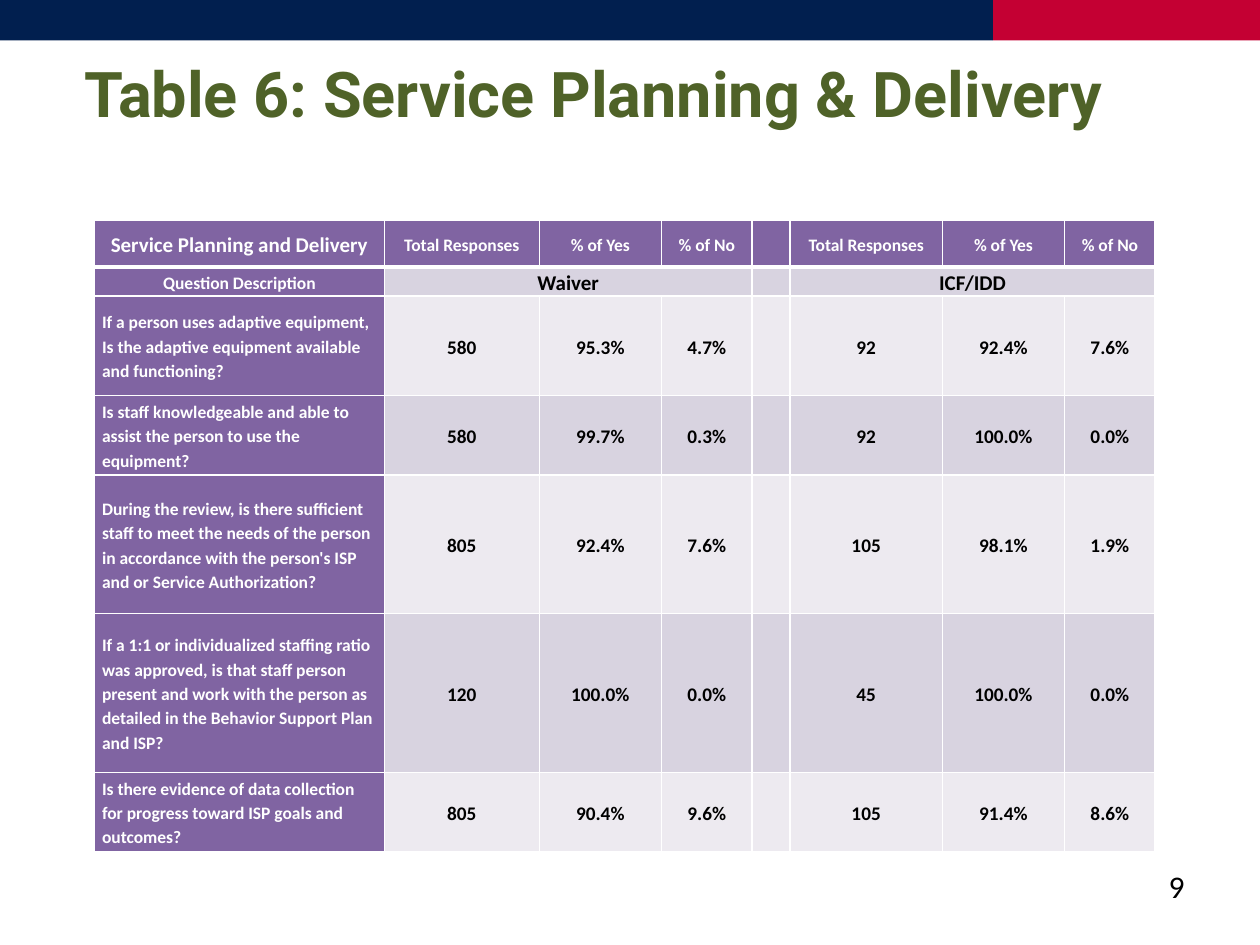
from lxml.etree import SubElement
from pptx import Presentation
from pptx.dml.color import RGBColor
from pptx.enum.shapes import MSO_SHAPE
from pptx.enum.text import MSO_ANCHOR, PP_ALIGN
from pptx.oxml.ns import qn
from pptx.util import Inches, Pt

NAVY = RGBColor(0x01, 0x1F, 0x4F)
RED = RGBColor(0xC4, 0x00, 0x33)
GREEN = RGBColor(0x4F, 0x62, 0x28)
PURPLE = RGBColor(0x80, 0x64, 0xA2)
LILAC = RGBColor(0xD8, 0xD3, 0xE0)
PALE = RGBColor(0xED, 0xEA, 0xF0)
WHITE = RGBColor(0xFF, 0xFF, 0xFF)
BLACK = RGBColor(0x00, 0x00, 0x00)

COLUMN_WIDTHS = [2.3, 1.23, 0.97, 0.72, 0.3, 1.21, 0.97, 0.72]
ROW_HEIGHTS = [0.37, 0.23, 0.79, 0.63, 1.1, 1.26, 0.63]
MEASURES = ["Total Responses", "% of Yes", "% of No"]
ROWS = [
    ["Service Planning and Delivery", *MEASURES, "", *MEASURES],
    ["Question Description", "Waiver", "", "", "", "ICF/IDD", "", ""],
    ["If a person uses adaptive equipment, Is the adaptive equipment available and functioning?",
     "580", "95.3%", "4.7%", "", "92", "92.4%", "7.6%"],
    ["Is staff knowledgeable and able to assist the person to use the equipment?",
     "580", "99.7%", "0.3%", "", "92", "100.0%", "0.0%"],
    ["During the review, is there sufficient staff to meet the needs of the person "
     "in accordance with the person's ISP and or Service Authorization?",
     "805", "92.4%", "7.6%", "", "105", "98.1%", "1.9%"],
    ["If a 1:1 or individualized staffing ratio was approved, is that staff person present "
     "and work with the person as detailed in the Behavior Support Plan and ISP?",
     "120", "100.0%", "0.0%", "", "45", "100.0%", "0.0%"],
    ["Is there evidence of data collection for progress toward ISP goals and outcomes?",
     "805", "90.4%", "9.6%", "", "105", "91.4%", "8.6%"],
]


def style_font(font, size, color, bold=False, name="Calibri"):
    font.name, font.size, font.bold = name, Pt(size), bold
    font.color.rgb = color


def add_band(slide, left, top, width, height):
    """Two-colour strip across the top."""
    split = Inches(7.88)
    for x, part_width, color in ((left + split, width - split, RED), (left, split, NAVY)):
        shape = slide.shapes.add_shape(MSO_SHAPE.RECTANGLE, x, top, part_width, height)
        shape.shadow.inherit = False
        shape.fill.solid()
        shape.fill.fore_color.rgb = color
        shape.line.fill.background()


def add_title(slide, left, top, width, height):
    title = slide.shapes.title
    title.left, title.top, title.width, title.height = left, top, width, height
    text_frame = title.text_frame
    text_frame.text = "Table 6: Service Planning & Delivery"
    text_frame.vertical_anchor = MSO_ANCHOR.TOP
    text_frame.margin_top = Inches(0.1)
    paragraph = text_frame.paragraphs[0]
    paragraph.alignment = PP_ALIGN.CENTER
    style_font(paragraph.runs[0].font, 36, GREEN, True, "Roboto")


def add_borders(cell, row):
    """White rules, with a heavier one under the header row."""
    properties = cell._tc.get_or_add_tcPr()
    widths = {"a:lnL": 1, "a:lnR": 1, "a:lnT": 3 if row == 1 else 1, "a:lnB": 3 if row == 0 else 1}
    for tag, width in widths.items():
        line = SubElement(properties, qn(tag), w=str(Pt(width)))
        SubElement(SubElement(line, qn("a:solidFill")), qn("a:srgbClr"), val=str(WHITE))


def cell_look(row, column):
    """Fill, text colour and text size by position."""
    if row == 0 or column == 0:
        return PURPLE, WHITE, 12 if row == column == 0 else 10
    return (LILAC if row % 2 else PALE), BLACK, 12 if row == 1 else 11


def format_cell(cell, row, column, text):
    fill, color, size = cell_look(row, column)
    is_value = row > 1 and column > 0
    add_borders(cell, row)
    cell.fill.solid()
    cell.fill.fore_color.rgb = fill
    cell.vertical_anchor = MSO_ANCHOR.MIDDLE
    cell.margin_left = cell.margin_right = Inches(0.07 if is_value else 0.06)
    cell.margin_top = cell.margin_bottom = 0
    cell.text_frame.text = text
    paragraph = cell.text_frame.paragraphs[0]
    paragraph.alignment = PP_ALIGN.LEFT if row > 1 and column == 0 else PP_ALIGN.CENTER
    paragraph.line_spacing = 1.15
    if is_value and text:
        paragraph.space_after = Pt(10)
    if text:
        style_font(paragraph.runs[0].font, size, color, True)
    else:
        paragraph.font.size = Pt(10)


def add_results_table(slide, left, top, width, height):
    frame = slide.shapes.add_table(len(ROWS), len(COLUMN_WIDTHS), left, top, width, height)
    table = frame.table
    for column, column_width in zip(table.columns, COLUMN_WIDTHS):
        column.width = Inches(column_width)
    for row, row_height in zip(table.rows, ROW_HEIGHTS):
        row.height = Inches(row_height)
    for row, texts in enumerate(ROWS):
        for column, text in enumerate(texts):
            format_cell(table.cell(row, column), row, column, text)
    # Group headings span their three measures
    for first in (1, 5):
        table.cell(1, first).merge(table.cell(1, first + 2))


def add_page_number(slide, left, top, width, height):
    text_frame = slide.shapes.add_textbox(left, top, width, height).text_frame
    text_frame.word_wrap = True
    text_frame.text = "9"
    paragraph = text_frame.paragraphs[0]
    paragraph.alignment = PP_ALIGN.RIGHT
    style_font(paragraph.runs[0].font, 18, BLACK)


def main():
    presentation = Presentation()
    presentation.slide_width, presentation.slide_height = Inches(10), Inches(7.5)
    slide = presentation.slides.add_slide(presentation.slide_layouts[5])
    add_band(slide, 0, 0, Inches(10), Inches(0.32))
    add_title(slide, Inches(0.42), Inches(0.33), Inches(8.58), Inches(0.92))
    add_page_number(slide, Inches(7.17), Inches(6.83), Inches(2.33), Inches(0.5))
    add_results_table(slide, Inches(0.75), Inches(1.75), Inches(8.42), Inches(5.01))
    presentation.save("out.pptx")


if __name__ == "__main__":
    main()
